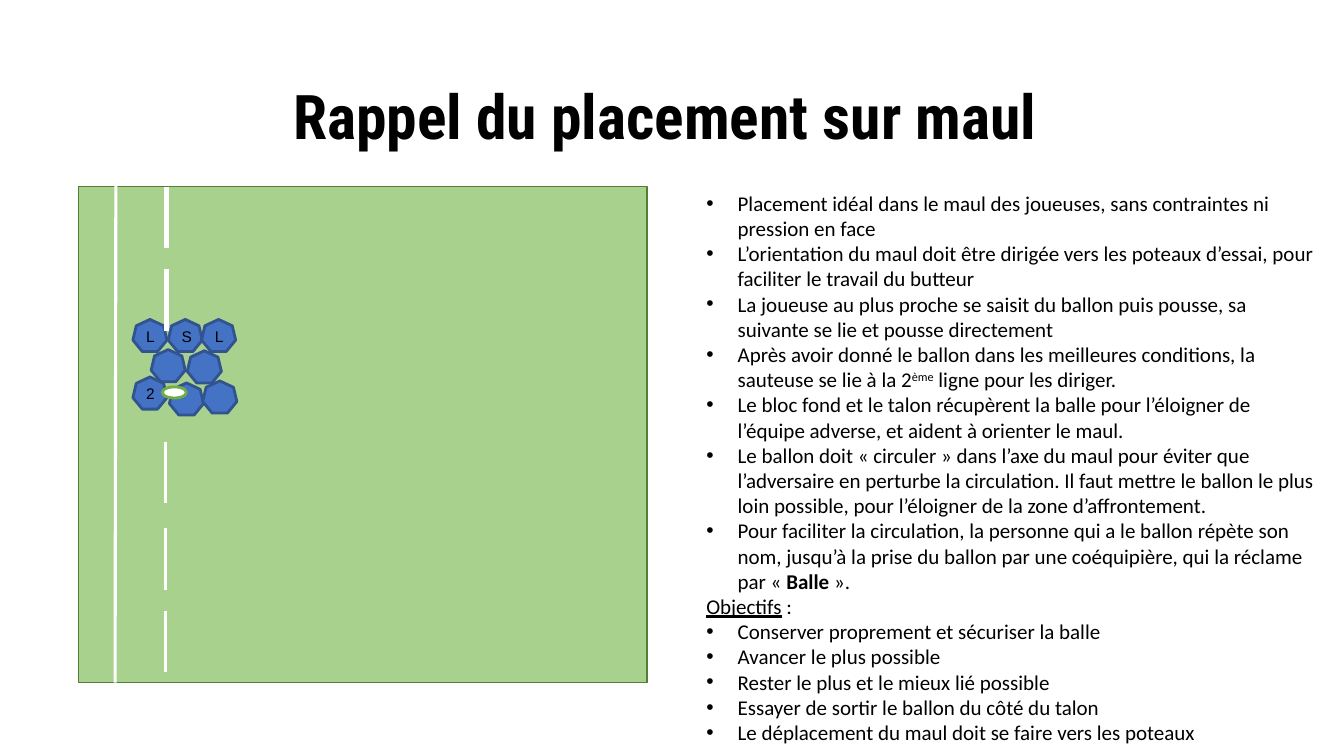
"""Build the slide recalling where players stand in a maul."""
from lxml import etree
from pptx import Presentation
from pptx.dml.color import RGBColor
from pptx.enum.shapes import MSO_CONNECTOR, MSO_SHAPE
from pptx.enum.text import MSO_ANCHOR, PP_ALIGN
from pptx.oxml.ns import qn
from pptx.util import Cm, Pt

RECTANGLE = MSO_SHAPE.RECTANGLE
HEPTAGON = MSO_SHAPE.HEPTAGON
OVAL = MSO_SHAPE.OVAL
STRAIGHT = MSO_CONNECTOR.STRAIGHT
CENTER = PP_ALIGN.CENTER
MIDDLE = MSO_ANCHOR.MIDDLE

BLACK = RGBColor(0x00, 0x00, 0x00)
WHITE = RGBColor(0xFF, 0xFF, 0xFF)
GRASS = RGBColor(0xA9, 0xD1, 0x8E)
GRASS_EDGE = RGBColor(0x52, 0x7F, 0x34)
PLAYER = RGBColor(0x44, 0x72, 0xC4)
PLAYER_EDGE = RGBColor(0x31, 0x53, 0x8F)
BALL_EDGE = RGBColor(0x70, 0xAD, 0x47)

PLAYERS = [
    (3.35, 8.05, "L"), (4.24, 8.05, "S"), (5.08, 8.05, "L"),
    (3.81, 8.81, ""), (4.72, 8.84, ""),
    (3.35, 9.5, "2"), (4.27, 9.65, ""), (5.11, 9.6, ""),
]
DASH_LENGTH = 1.55
DASHES = {4.17: [4.7, 6.78, 11.13, 13.31, 15.39], 4.24: [4.7, 6.78]}

ADVICE = [
    [("Placement idéal dans le maul des joueuses, sans contraintes ni pression en face", "")],
    [("L’orientation du maul doit être dirigée vers les poteaux d’essai, pour faciliter "
      "le travail du butteur", "")],
    [("La joueuse au plus proche se saisit du ballon puis pousse, sa suivante se lie et "
      "pousse directement", "")],
    [("Après avoir donné le ballon dans les meilleures conditions, la sauteuse se lie à la 2", ""),
     ("ème", "superscript"), (" ligne pour les diriger.", "")],
    [("Le bloc fond et le talon récupèrent la balle pour l’éloigner de l’équipe adverse, "
      "et aident à orienter le maul.", "")],
    [("Le ballon doit « circuler » dans l’axe du maul pour éviter que l’adversaire en "
      "perturbe la circulation. Il faut mettre le ballon le plus loin possible, pour "
      "l’éloigner de la zone d’affrontement.", "")],
    [("Pour faciliter la circulation, la personne qui a le ballon répète son nom, jusqu’à "
      "la prise du ballon par une coéquipière, qui la réclame par « ", ""),
     ("Balle", "bold"), (" ».", "")],
]
GOALS_HEADING = [("Objectifs", "underline"), (" :", "")]
GOALS = [
    [("Conserver proprement et sécuriser la balle", "")],
    [("Avancer le plus possible", "")],
    [("Rester le plus et le mieux lié possible", "")],
    [("Essayer de sortir le ballon du côté du talon", "")],
    [("Le déplacement du maul doit se faire vers les poteaux", "")],
]


class SlideBuilder:
    """Draw styled elements on one slide, with lengths in centimetres."""

    title_font = "Roboto Condensed"
    body_font = "Calibri"
    label_font = "Arial"
    bullet_indent = Cm(0.79)

    def __init__(self, slide):
        self.slide = slide

    def format_run(self, run, name, size, style=""):
        run.font.name = name
        run.font.size = Pt(size)
        run.font.color.rgb = BLACK
        if style == "bold":
            run.font.bold = True
        elif style == "underline":
            run.font.underline = True
        elif style == "superscript":
            run._r.get_or_add_rPr().set("baseline", "30000")

    def shape(self, kind, left, top, width, height, fill, edge, edge_width, label=""):
        shape = self.slide.shapes.add_shape(kind, Cm(left), Cm(top), Cm(width), Cm(height))
        shape.shadow.inherit = False
        shape.fill.solid()
        shape.fill.fore_color.rgb = fill
        shape.line.color.rgb = edge
        shape.line.width = Pt(edge_width)
        if label:
            shape.text_frame.text = label
            shape.text_frame.vertical_anchor = MIDDLE
            paragraph = shape.text_frame.paragraphs[0]
            paragraph.alignment = CENTER
            paragraph.line_spacing = 1.07
            self.format_run(paragraph.runs[0], self.label_font, 11)

    def line(self, start_x, start_y, end_x, end_y, width):
        connector = self.slide.shapes.add_connector(
            STRAIGHT, Cm(start_x), Cm(start_y), Cm(end_x), Cm(end_y))
        connector.line.color.rgb = WHITE
        connector.line.width = Pt(width)
        etree.SubElement(connector._element.spPr, qn("a:effectLst"))

    def text_frame(self, left, top, width, height):
        box = self.slide.shapes.add_textbox(Cm(left), Cm(top), Cm(width), Cm(height))
        box.text_frame.word_wrap = True
        return box.text_frame

    def title(self, text, left, top, width, height):
        frame = self.text_frame(left, top, width, height)
        frame.text = text
        paragraph = frame.paragraphs[0]
        paragraph.alignment = CENTER
        self.format_run(paragraph.runs[0], self.title_font, 44, "bold")

    def bullet(self, paragraph):
        properties = paragraph._p.get_or_add_pPr()
        properties.set("marL", str(self.bullet_indent))
        properties.set("indent", str(-self.bullet_indent))
        etree.SubElement(properties, qn("a:buFont")).set("typeface", self.label_font)
        etree.SubElement(properties, qn("a:buChar")).set("char", "•")

    def advice_column(self, left, top, width, height):
        frame = self.text_frame(left, top, width, height)
        for index, pieces in enumerate([*ADVICE, GOALS_HEADING, *GOALS]):
            paragraph = frame.add_paragraph() if index else frame.paragraphs[0]
            if pieces is not GOALS_HEADING:
                self.bullet(paragraph)
            for text, style in pieces:
                run = paragraph.add_run()
                run.text = text
                self.format_run(run, self.body_font, 15, style)


def main():
    presentation = Presentation()
    presentation.slide_width = Cm(33.87)
    presentation.slide_height = Cm(19.05)
    slide = presentation.slides.add_slide(presentation.slide_layouts[6])
    builder = SlideBuilder(slide)

    builder.shape(RECTANGLE, 1.98, 4.7, 14.33, 12.5, GRASS, GRASS_EDGE, 1)
    builder.line(2.92, 4.67, 2.9, 17.2, 2.25)
    for left, top, label in PLAYERS:
        builder.shape(HEPTAGON, left, top, 0.86, 0.81, PLAYER, PLAYER_EDGE, 2, label)
    builder.shape(OVAL, 4.09, 9.75, 0.61, 0.28, WHITE, BALL_EDGE, 2)
    builder.title("Rappel du placement sur maul ", 6.48, 1.85, 20.93, 2.13)
    builder.advice_column(17.55, 4.67, 15.85, 14.35)
    for x, tops in DASHES.items():
        for top in tops:
            builder.line(x, top, x, top + DASH_LENGTH, 1.5)

    presentation.save("out.pptx")


if __name__ == "__main__":
    main()
